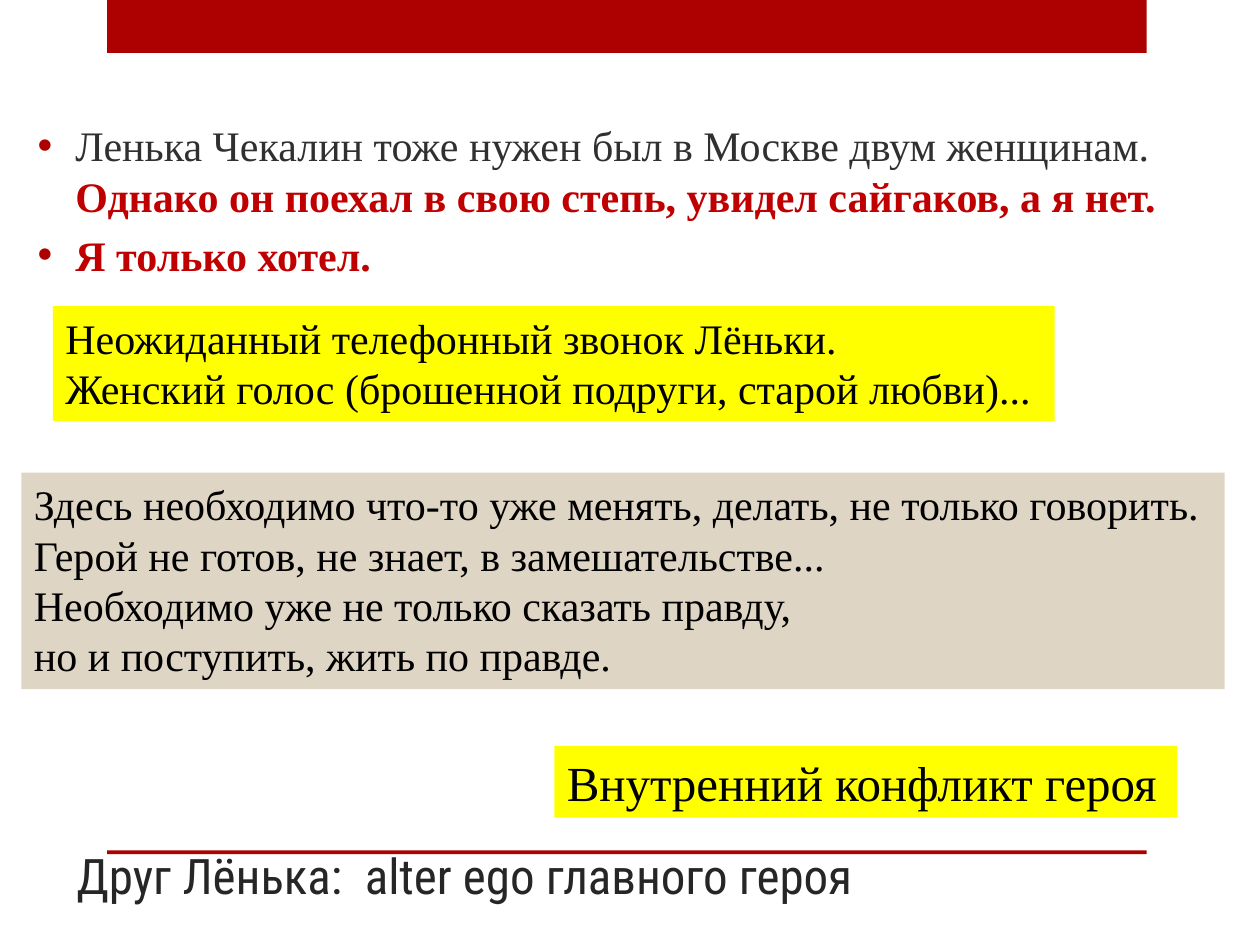
from dataclasses import dataclass

from lxml.etree import SubElement
from pptx import Presentation
from pptx.dml.color import RGBColor
from pptx.enum.shapes import MSO_SHAPE
from pptx.enum.text import MSO_ANCHOR as Anchor, MSO_AUTO_SIZE as AutoSize
from pptx.oxml.ns import qn
from pptx.util import Inches, Pt

WHITE = RGBColor(0xFF, 0xFF, 0xFF)
BLACK = RGBColor(0x00, 0x00, 0x00)
CRIMSON = RGBColor(0xAD, 0x01, 0x01)
RED = RGBColor(0xC0, 0x00, 0x00)
YELLOW = RGBColor(0xFF, 0xFF, 0x00)
BEIGE = RGBColor(0xDE, 0xD5, 0xC5)
CHARCOAL = RGBColor(0x30, 0x30, 0x30)
TITLE_GREY = RGBColor(0x26, 0x26, 0x26)

SERIF = "Times New Roman"
CONDENSED = "Roboto Condensed"


@dataclass(frozen=True)
class Area:
    left: float
    top: float
    width: float
    height: float

    def lengths(self) -> list:
        return [Inches(n) for n in (self.left, self.top, self.width, self.height)]


@dataclass(frozen=True)
class Span:
    text: str
    color: RGBColor = BLACK
    size: int = 24
    font: str = SERIF
    bold: bool = False


@dataclass(frozen=True)
class Panel:
    area: Area
    fill: RGBColor
    lines: tuple[str, ...]
    size: int = 24


BARS = (Area(0.85, 0, 8.25, 0.42), Area(0.85, 6.75, 8.25, 0.03))

PANELS = (
    Panel(Area(0.42, 2.43, 7.95, 0.91), YELLOW, (
        "Неожиданный телефонный звонок Лёньки.",
        "Женский голос (брошенной подруги, старой любви)...",
    )),
    Panel(Area(0.17, 3.75, 9.55, 1.72), BEIGE, (
        "Здесь необходимо что-то уже менять, делать, не только говорить.",
        "Герой не готов, не знает, в замешательстве...",
        "Необходимо уже не только сказать правду,",
        "но и поступить, жить по правде.",
    )),
    Panel(Area(4.4, 5.92, 4.94, 0.57), YELLOW, ("Внутренний конфликт героя",), 28),
)

TITLE = Span("Друг Лёнька:  alter ego главного героя", TITLE_GREY, 28, CONDENSED)
BULLETS = (
    (
        Span("Ленька Чекалин тоже нужен был в Москве двум женщинам. ", CHARCOAL),
        Span("Однако он поехал в свою степь, увидел сайгаков, а я нет.", RED, bold=True),
    ),
    (Span("Я только хотел.", RED, bold=True),),
)


def add_bar(page, area: Area, color: RGBColor):
    bar = page.shapes.add_shape(MSO_SHAPE.RECTANGLE, *area.lengths())
    bar.shadow.inherit = False
    bar.fill.solid()
    bar.fill.fore_color.rgb = color
    bar.line.fill.background()
    return bar


def write(box, paragraphs, anchor: Anchor, wrap: bool = True) -> None:
    frame = box.text_frame
    frame.word_wrap = wrap
    frame.vertical_anchor = anchor
    for index, spans in enumerate(paragraphs):
        para = frame.add_paragraph() if index else frame.paragraphs[0]
        for span in spans:
            run = para.add_run()
            run.text = span.text
            run.font.color.rgb = span.color
            formats = {"name": span.font, "size": Pt(span.size), "bold": span.bold}
            for name, value in formats.items():
                setattr(run.font, name, value)


def add_text(page, area: Area, paragraphs, anchor: Anchor):
    box = page.shapes.add_textbox(*area.lengths())
    write(box, paragraphs, anchor)
    return box


def add_panel(page, panel: Panel) -> None:
    box = page.shapes.add_textbox(*panel.area.lengths())
    box.fill.solid()
    box.fill.fore_color.rgb = panel.fill
    write(box, [(Span(line, size=panel.size),) for line in panel.lines], Anchor.TOP, False)
    box.text_frame.auto_size = AutoSize.SHAPE_TO_FIT_TEXT


def add_bullet(para, color: RGBColor, indent: float) -> None:
    para.space_before = Pt(5)
    properties = para._p.get_or_add_pPr()
    properties.set("marL", str(Inches(indent)))
    properties.set("indent", str(Inches(-indent)))
    bullet_color = SubElement(properties, qn("a:buClr"))
    SubElement(bullet_color, qn("a:srgbClr"), val=str(color))
    SubElement(properties, qn("a:buFont"), typeface="Arial")
    SubElement(properties, qn("a:buChar"), char="•")


def main() -> None:
    deck = Presentation()
    deck.slide_width, deck.slide_height = Inches(10), Inches(7.5)
    page = deck.slides.add_slide(deck.slide_layouts[6])
    page.background.fill.solid()
    page.background.fill.fore_color.rgb = WHITE

    for area in BARS:
        add_bar(page, area, CRIMSON)
    add_text(page, Area(0.51, 5.48, 9.37, 1.75), [(TITLE,)], Anchor.BOTTOM)
    body = add_text(page, Area(0.2, 0.6, 9.61, 1.97), BULLETS, Anchor.MIDDLE)
    for para in body.text_frame.paragraphs:
        add_bullet(para, CRIMSON, 0.3)
    for panel in PANELS:
        add_panel(page, panel)

    deck.save("out.pptx")


if __name__ == "__main__":
    main()
